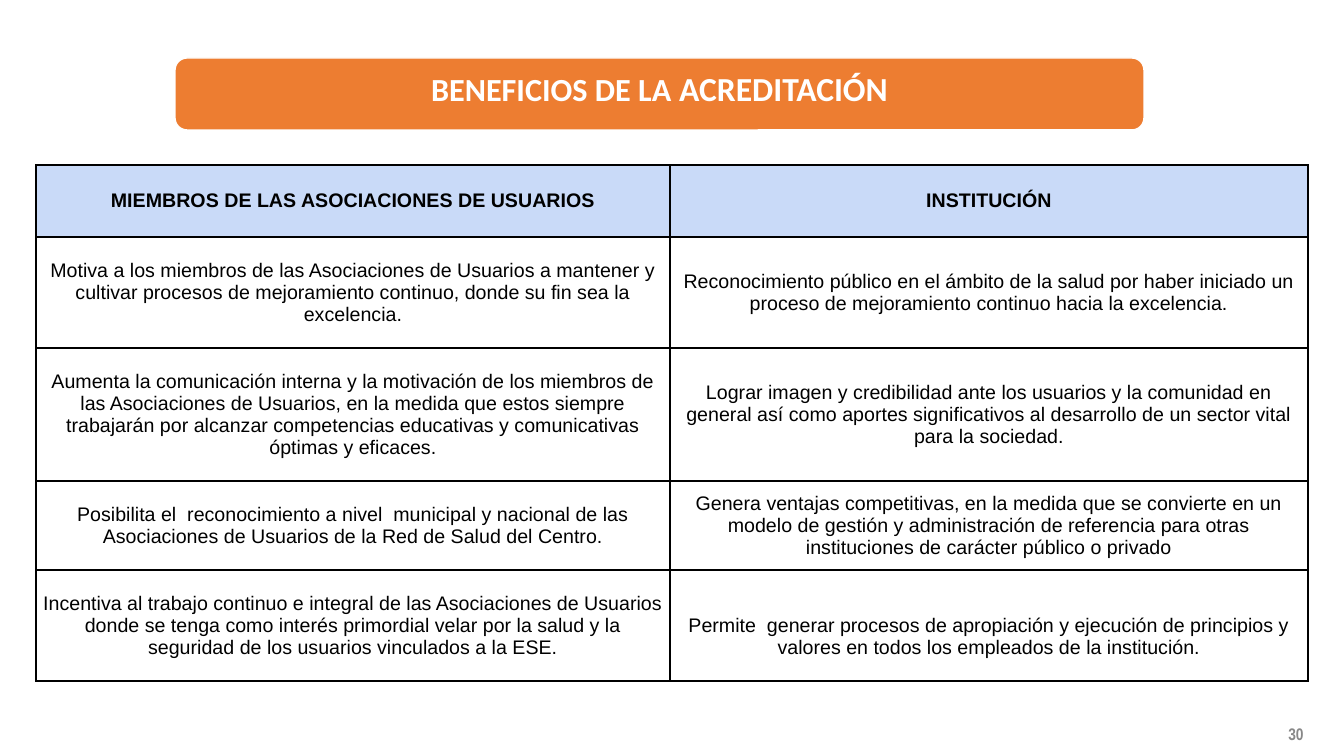
from lxml import etree
from pptx import Presentation
from pptx.dml.color import RGBColor
from pptx.enum.shapes import MSO_SHAPE as Shape
from pptx.enum.text import MSO_ANCHOR as Anchor, PP_ALIGN as Align
from pptx.oxml import parse_xml
from pptx.util import Pt

PX = 914400 / 100.8
NAMESPACE = "http://schemas.openxmlformats.org/drawingml/2006/main"


def px(*lengths):
    """Turn px lengths into EMU."""
    return [round(length * PX) for length in lengths]


def add_span(para, text, size, color, name, bold):
    span = para.add_run()
    span.text = text
    for key, value in {"size": Pt(size), "name": name, "bold": bold}.items():
        setattr(span.font, key, value)
    span.font.color.rgb = RGBColor.from_string(color)


deck = Presentation()
deck.slide_width, deck.slide_height = px(1344, 756)
page = deck.slides.add_slide(deck.slide_layouts[6])

# Page number
number = page.shapes.add_textbox(*px(1257, 714, 78, 40)).text_frame
number.word_wrap = True
number.vertical_anchor = Anchor.MIDDLE
number.paragraphs[0].alignment = Align.CENTER
add_span(number.paragraphs[0], "30", 12, "888888", "Arial Narrow", True)

# Benefits table
rows = [
    ("MIEMBROS DE LAS ASOCIACIONES DE USUARIOS", "INSTITUCIÓN"),
    ("Motiva a los miembros de las Asociaciones de Usuarios a mantener y cultivar "
     "procesos de mejoramiento continuo, donde su fin sea la excelencia.",
     "Reconocimiento público en el ámbito de la salud por haber iniciado un proceso "
     "de mejoramiento continuo hacia la excelencia."),
    ("Aumenta la comunicación interna y la motivación de los miembros de las "
     "Asociaciones de Usuarios, en la medida que estos siempre trabajarán por "
     "alcanzar competencias educativas y comunicativas óptimas y eficaces.",
     "Lograr imagen y credibilidad ante los usuarios y la comunidad en general así "
     "como aportes significativos al desarrollo de un sector vital para la sociedad."),
    ("Posibilita el  reconocimiento a nivel  municipal y nacional de las "
     "Asociaciones de Usuarios de la Red de Salud del Centro.",
     "Genera ventajas competitivas, en la medida que se convierte en un modelo de "
     "gestión y administración de referencia para otras instituciones de carácter "
     "público o privado"),
    ("Incentiva al trabajo continuo e integral de las Asociaciones de Usuarios donde "
     "se tenga como interés primordial velar por la salud y la seguridad de los "
     "usuarios vinculados a la ESE.",
     "Permite  generar procesos de apropiación y ejecución de principios y valores "
     "en todos los empleados de la institución."),
]
widths = px(634, 638)
heights = px(72, 111, 133, 89, 111)
left, top, margin = px(36, 165, 7)
table = page.shapes.add_table(len(rows), len(widths), left, top,
                              sum(widths), sum(heights)).table
table.first_row = table.horz_banding = False
for column, width in zip(table.columns, widths):
    column.width = width

for row_index, (texts, height) in enumerate(zip(rows, heights)):
    table.rows[row_index].height = height
    for column_index, text in enumerate(texts):
        cell = table.cell(row_index, column_index)
        cell.vertical_anchor = Anchor.MIDDLE
        for side in ("left", "top", "right", "bottom"):
            setattr(cell, f"margin_{side}", margin)
        properties = cell._tc.get_or_add_tcPr()
        for edge in "LRTB":
            properties.append(parse_xml(
                f'<a:ln{edge} xmlns:a="{NAMESPACE}" w="{Pt(1.5)}"><a:solidFill>'
                f'<a:srgbClr val="000000"/></a:solidFill></a:ln{edge}>'))
        if row_index == 0:
            cell.fill.solid()
            cell.fill.fore_color.rgb = RGBColor.from_string("C9DAF8")
        else:
            cell.fill.background()
        para = cell.text_frame.paragraphs[0]
        para.alignment = Align.CENTER
        add_span(para, text, 14, "000000", "Arial", row_index == 0)

# The last cell sits one line lower than the rest
table.cell(4, 1).margin_top = px(29)[0]

# Title banner
banner = page.shapes.add_shape(Shape.ROUNDED_RECTANGLE, *px(175, 58, 969, 72))
banner.shadow.inherit = False
banner.fill.solid()
banner.fill.fore_color.rgb = RGBColor.from_string("ED7D31")
banner.line.color.rgb = RGBColor.from_string("FFFFFF")
banner.line.width = Pt(1)
title = banner.text_frame
title.word_wrap = True
title.vertical_anchor = Anchor.MIDDLE
title.margin_top, title.margin_bottom = px(10, 17)
para = title.paragraphs[0]
para.alignment = Align.CENTER
para.line_spacing = 0.9
for text, size in (("BENEFICIOS DE LA ", 23), ("ACREDITACIÓN", 24)):
    add_span(para, text, size, "FFFFFF", "Calibri", True)

deck.save("out.pptx")
